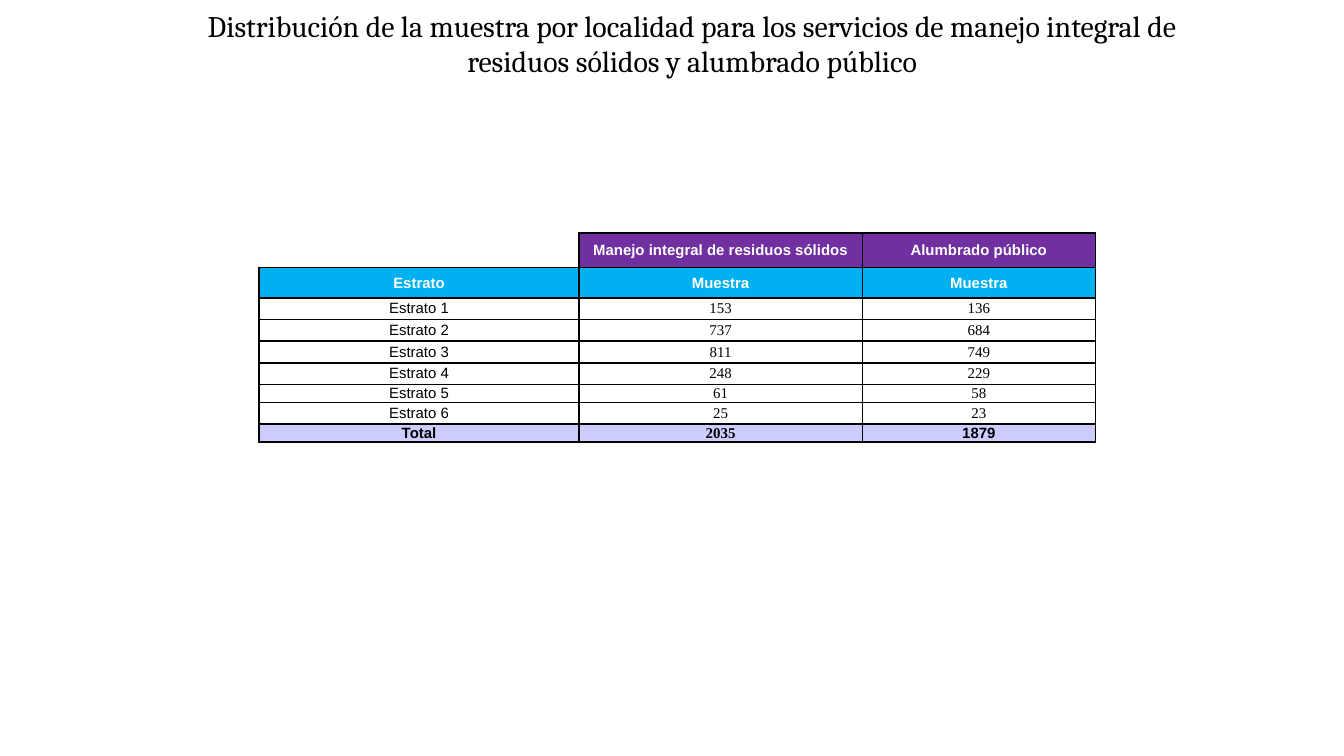
from lxml import etree
from pptx import Presentation
from pptx.dml.color import RGBColor
from pptx.enum.text import MSO_ANCHOR, PP_ALIGN
from pptx.oxml.ns import qn
from pptx.util import Cm, Pt

MIDDLE = MSO_ANCHOR.MIDDLE
CENTER = PP_ALIGN.CENTER
COLORS = {
    "text": "000000",
    "white": "FFFFFF",
    "service": "7030A0",
    "heading": "00B0F0",
    "total": "CCCCFF",
    "border": "000000",
}
SANS, SERIF = "Arial", "Times New Roman"
COLUMN_WIDTHS = [2.0, 2.16, 1.88, 5.36, 4.4]
ROW_HEIGHTS = [0.66, 0.57, 0.41, 0.41, 0.41, 0.41, 0.34, 0.41, 0.34]
LABEL_COLUMNS = 3
ROWS = [
    ("", "Manejo integral de residuos sólidos", "Alumbrado público"),
    ("Estrato", "Muestra", "Muestra"),
    ("Estrato 1", "153", "136"),
    ("Estrato 2", "737", "684"),
    ("Estrato 3", "811", "749"),
    ("Estrato 4", "248", "229"),
    ("Estrato 5", "61", "58"),
    ("Estrato 6", "25", "23"),
    ("Total", "2035", "1879"),
]
TOTAL_ROW = len(ROWS) - 1


def add_text(paragraph, text, font_name, size, color, bold=False):
    paragraph.alignment = CENTER
    run = paragraph.add_run()
    run.text = text
    run.font.name = font_name
    run.font.size = Pt(size)
    run.font.bold = bold
    run.font.color.rgb = RGBColor.from_string(COLORS[color])


def add_borders(cell, sides):
    """Draw the borders named by sides, in the order L, R, T, B."""
    properties = cell._tc.get_or_add_tcPr()
    for side in sides:
        line = etree.SubElement(properties, qn(f"a:ln{side}"), w=str(Pt(1)))
        fill = etree.SubElement(line, qn("a:solidFill"))
        etree.SubElement(fill, qn("a:srgbClr"), val=COLORS["border"])


prs = Presentation()
prs.slide_width, prs.slide_height = Cm(25.4), Cm(14.29)
slide = prs.slides.add_slide(prs.slide_layouts[5])

title = slide.shapes.title
title.left, title.top, title.width, title.height = Cm(3.89), Cm(0.23), Cm(18.39), Cm(1.17)
heading = title.text_frame
heading.word_wrap = True
heading.vertical_anchor = MIDDLE
heading.margin_left = heading.margin_right = 0
heading.margin_top = heading.margin_bottom = Cm(0.03)
add_text(
    heading.paragraphs[0],
    "Distribución de la muestra por localidad para los servicios de manejo integral "
    "de residuos sólidos y alumbrado público",
    "Cambria", 16, "text",
)

sample = slide.shapes.add_table(
    len(ROWS), len(COLUMN_WIDTHS), Cm(4.9), Cm(4.4),
    Cm(sum(COLUMN_WIDTHS)), Cm(sum(ROW_HEIGHTS)),
).table
sample.first_row = sample.horz_banding = False
for column, width in zip(sample.columns, COLUMN_WIDTHS):
    column.width = Cm(width)
for row, height in zip(sample.rows, ROW_HEIGHTS):
    row.height = Cm(height)

for r, (label, solid_waste, lighting) in enumerate(ROWS):
    row_fill = {0: "service", 1: "heading", TOTAL_ROW: "total"}.get(r, "white")
    text_color = "white" if r < 2 else "text"
    bold = r < 2 or r == TOTAL_ROW
    if label:
        sample.cell(r, 0).merge(sample.cell(r, LABEL_COLUMNS - 1))

    for c, text in enumerate((label, "", "", solid_waste, lighting)):
        cell = sample.cell(r, c)
        cell.vertical_anchor = MIDDLE
        cell.margin_left = cell.margin_right = cell.margin_top = cell.margin_bottom = 0
        blank_corner = r == 0 and c < LABEL_COLUMNS
        if blank_corner:
            add_borders(cell, "RB" if c == LABEL_COLUMNS - 1 else "B")
        else:
            add_borders(cell, "LRTB")
        cell.fill.solid()
        cell.fill.fore_color.rgb = RGBColor.from_string(
            COLORS["white" if blank_corner else row_fill])

        paragraph = cell.text_frame.paragraphs[0]
        if text:
            is_serif = r > 1 and c >= LABEL_COLUMNS and text != "1879"
            add_text(paragraph, text, SERIF if is_serif else SANS, 8, text_color, bold)
        else:
            # Keeps the empty cell from stretching its row
            etree.SubElement(paragraph._p, qn("a:endParaRPr"), sz="800")

prs.save("out.pptx")
